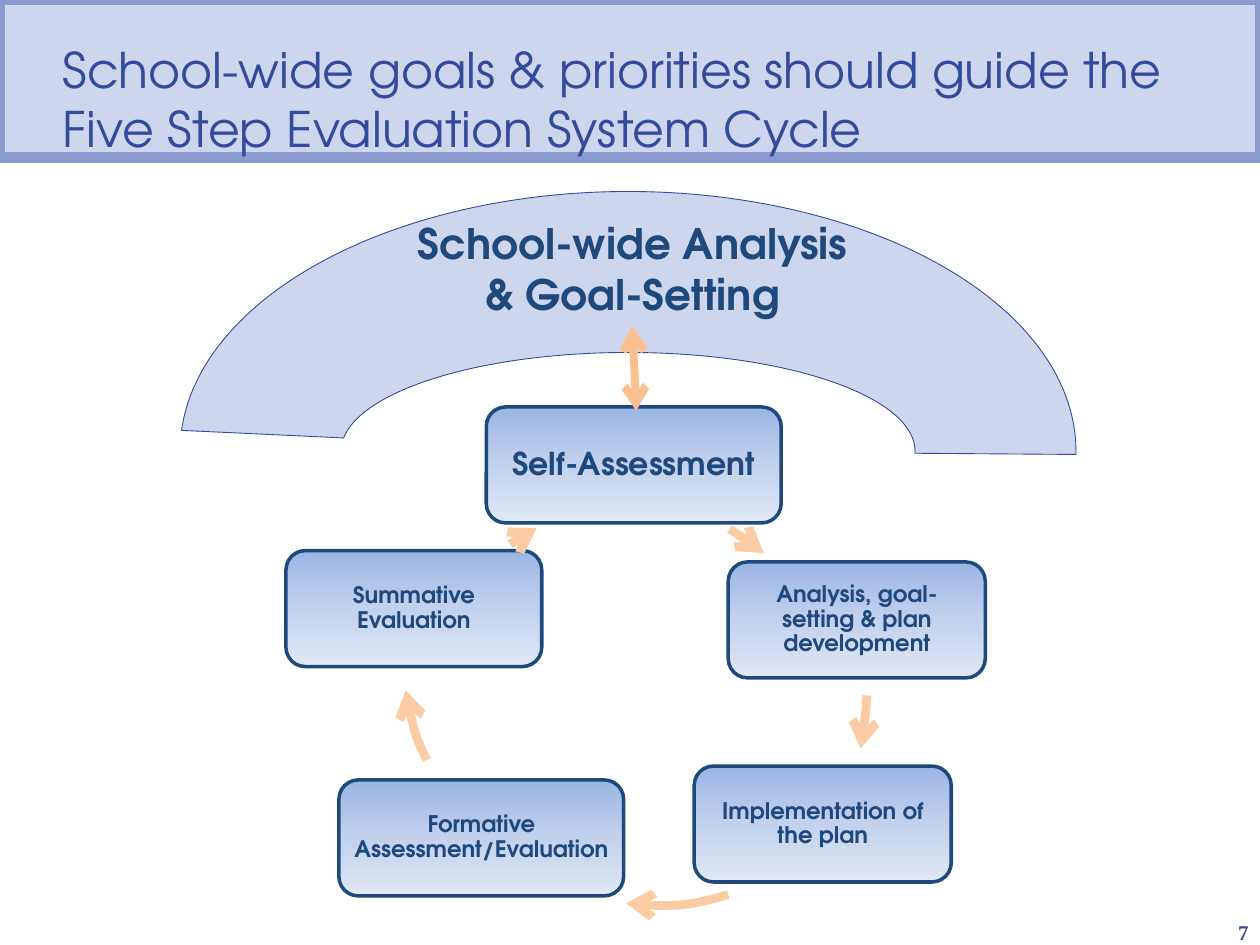
from copy import deepcopy

from lxml import etree
from pptx import Presentation
from pptx.dml.color import RGBColor
from pptx.enum.shapes import MSO_CONNECTOR, MSO_SHAPE
from pptx.enum.text import MSO_ANCHOR as ANCHOR, PP_ALIGN as ALIGN
from pptx.oxml.ns import qn
from pptx.util import Inches, Pt

FONT = "TeX Gyre Adventor"
PALE, EDGE, ROYAL, NAVY = "CED6ED", "899ACE", "334B9C", "1F497D"


def rgb(color):
    return RGBColor.from_string(color)


def write(sp, lines, size, color, align, anchor, margins, bold=True, font=FONT):
    """Fill a shape with one paragraph per line, all in one style."""
    tf = sp.text_frame
    tf.word_wrap = True
    tf.vertical_anchor = anchor
    tf.margin_left = tf.margin_right = Inches(margins[0])
    tf.margin_top = tf.margin_bottom = Inches(margins[1])
    tf.text = "\n".join(lines)
    for p in tf.paragraphs:
        p.alignment = align
        f = p.runs[0].font
        f.name, f.size, f.bold = font, Pt(size), bold
        f.color.rgb = rgb(color)
    return tf


prs = Presentation()
prs.slide_width, prs.slide_height = Inches(10), Inches(7.5)
s = prs.slides.add_slide(prs.slide_layouts[6])

# Arch with its heading
arch = s.shapes.add_shape(MSO_SHAPE.BLOCK_ARC, Inches(1.43), Inches(1.52),
                          Inches(7.11), Inches(4.12))
for i, value in enumerate((109.59, 0.26, 0.31)):
    arch.adjustments[i] = value
heading = s.shapes.add_textbox(Inches(3.09), Inches(1.68), Inches(3.86), Inches(0.91))
write(heading, ["School-wide Analysis & Goal-Setting"], 24, NAVY,
      ALIGN.CENTER, ANCHOR.TOP, (0.1, 0.05))

# Title band
band = s.shapes.add_shape(MSO_SHAPE.RECTANGLE, 0, 0, Inches(10), Inches(1.25))
write(band, ["School-wide goals & priorities should guide the",
             "Five Step Evaluation System Cycle"], 28, ROYAL,
      ALIGN.LEFT, ANCHOR.BOTTOM, (0.5, 0), bold=False)

for sp, line, width in ((arch, ROYAL, 0.5), (band, EDGE, 6)):
    sp.shadow.inherit = False
    sp.fill.solid()
    sp.fill.fore_color.rgb = rgb(PALE)
    sp.line.color.rgb = rgb(line)
    sp.line.width = Pt(width)

# Cycle: label, left, top, width, text size,
# then frame corner and Bezier points of the arrow that follows
steps = [
    ("Self-Assessment", 3.86, 3.23, 2.34, 18, (3.05, 3.96),
     [(5.79, 4.2), (5.89, 4.26), (5.98, 4.32), (6.06, 4.39)]),
    ("Analysis, goal-setting & plan development", 5.78, 4.46, 2.04, 13, (3.2, 3.68),
     [(6.88, 5.52), (6.87, 5.66), (6.86, 5.8), (6.83, 5.94)]),
    ("Implementation of the plan", 5.51, 6.08, 2.04, 13, (3.38, 3.51),
     [(5.78, 7.1), (5.52, 7.18), (5.24, 7.21), (4.97, 7.17)]),
    ("Formative Assessment/Evaluation", 2.69, 6.19, 2.26, 13, (3.2, 3.37),
     [(3.39, 6.03), (3.3, 5.86), (3.25, 5.67), (3.22, 5.48)]),
    ("Summative Evaluation", 2.27, 4.37, 2.03, 13, (3.32, 3.95),
     [(4.05, 4.32), (4.12, 4.27), (4.19, 4.23), (4.26, 4.19)]),
]
RING = Inches(3.67)
for label, left, top, width, size, corner, curve in steps:
    box = s.shapes.add_shape(MSO_SHAPE.ROUNDED_RECTANGLE, Inches(left), Inches(top),
                             Inches(width), Inches(0.92))
    box.shadow.inherit = False
    box.line.color.rgb = rgb(NAVY)
    box.line.width = Pt(2)
    box.fill.gradient()
    box.fill.gradient_angle = 270
    gs = box._element.spPr.find(".//" + qn("a:gs"))
    gs.addnext(deepcopy(gs))
    for stop, pos, color in zip(box.fill.gradient_stops, (0, 0.5, 1),
                                ("9AB5E4", "C2D1ED", "E1E8F5")):
        stop.position = pos
        stop.color.rgb = rgb(color)
    tf = write(box, [label], size, NAVY, ALIGN.CENTER, ANCHOR.MIDDLE, (0.06, 0.05))
    tf.paragraphs[0].line_spacing = 0.9

    # Curved arrow to the next step, drawn inside the frame of the whole ring
    points = [(Inches(x - corner[0]), Inches(y - corner[1])) for x, y in curve]
    builder = s.shapes.build_freeform(*points[0])
    builder.add_line_segments(points[-1:], close=False)
    arrow = builder.convert_to_shape()
    arrow.left, arrow.top = Inches(corner[0]), Inches(corner[1])
    arrow.width = arrow.height = RING
    outline = arrow._element.spPr.find(".//" + qn("a:path"))
    for child in list(outline):
        outline.remove(child)
    outline.set("w", str(RING))
    outline.set("h", str(RING))
    for tag, pts in (("a:moveTo", points[:1]), ("a:cubicBezTo", points[1:])):
        command = etree.SubElement(outline, qn(tag))
        for x, y in pts:
            etree.SubElement(command, qn("a:pt"), x=str(x), y=str(y))
    arrow.shadow.inherit = False
    arrow.fill.background()
    arrow.line.color.rgb = rgb("FBCBA3")
    arrow.line.width = Pt(5)
    etree.SubElement(arrow.line._get_or_add_ln(), qn("a:tailEnd"), type="arrow")

# Slide number
number = s.shapes.add_textbox(Inches(7.58), Inches(7.1), Inches(2.33), Inches(0.4))
write(number, ["7"], 12, ROYAL, ALIGN.RIGHT, ANCHOR.BOTTOM, (0, 0),
      font="Times New Roman")

# Two-way arrow between arch and first step
link = s.shapes.add_connector(MSO_CONNECTOR.STRAIGHT, Inches(5.02), Inches(2.59),
                              Inches(5.05), Inches(3.26))
link.line.color.rgb = rgb("FAC090")
link.line.width = Pt(4.5)
for end in ("a:headEnd", "a:tailEnd"):
    etree.SubElement(link.line._get_or_add_ln(), qn(end), type="arrow")
etree.SubElement(link._element.spPr, qn("a:effectLst"))

prs.save("out.pptx")
